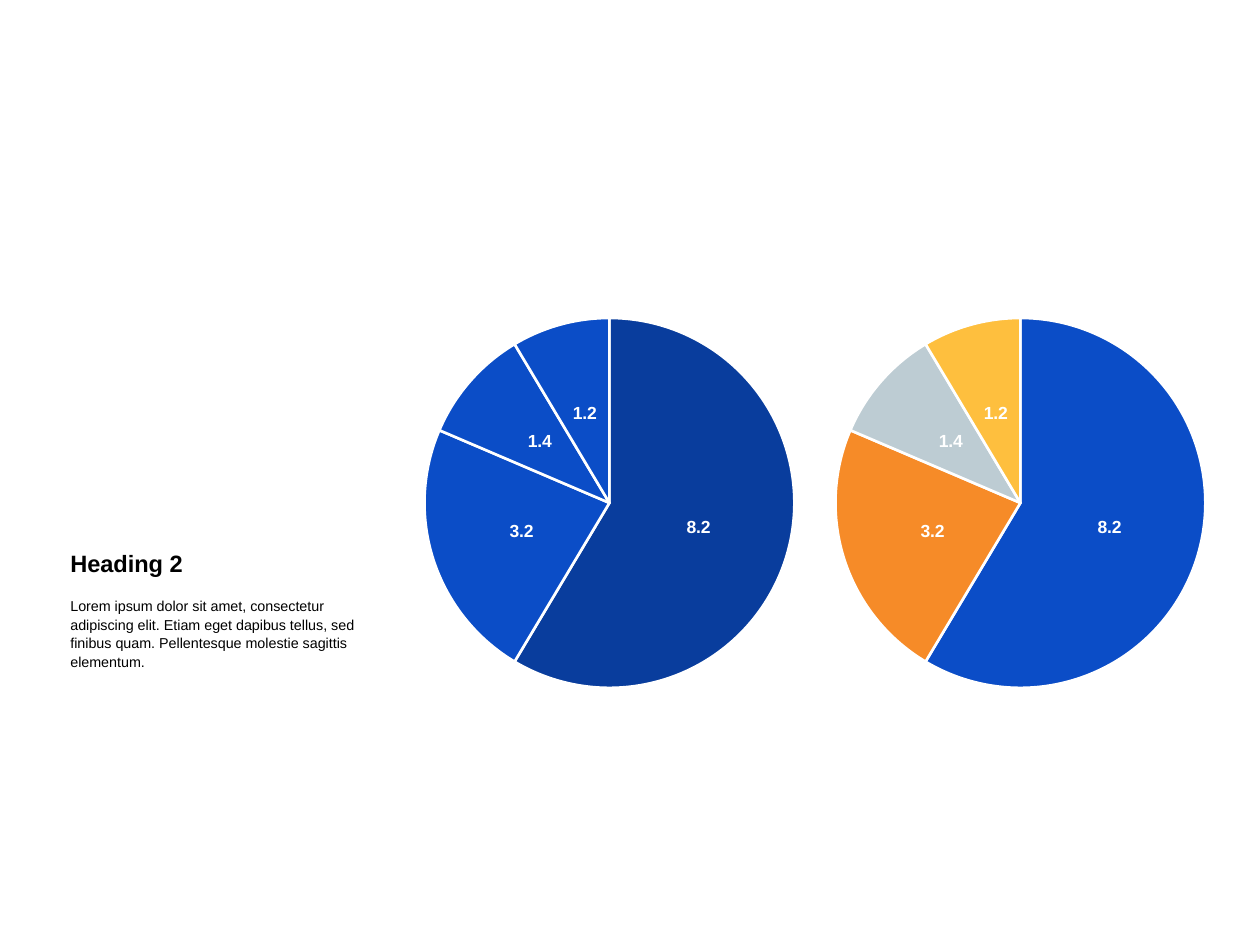
from lxml import etree
from pptx import Presentation
from pptx import util as u
from pptx.chart import data
from pptx.dml import color
from pptx.enum import chart as chart_enum, text
from pptx.oxml import ns

PX = 914400 / 126
COLORS = {
    "black": "000000",
    "white": "FFFFFF",
    "navy": "093D9D",
    "blue": "0B4DC7",
    "orange": "F68B28",
    "gray": "BDCCD3",
    "yellow": "FEBF3E",
}
PIES = [
    ["navy", "blue", "blue", "blue"],
    ["blue", "orange", "gray", "yellow"],
]
PIE_LEFT, PIE_TOP, PIE_WIDTH, PIE_HEIGHT, PIE_DIAMETER = 404, 300, 411, 406, 370


def px(length):
    return u.Emu(round(length * PX))


def style_font(font, size, name, bold=False):
    font.name = "Arial"
    font.size = u.Pt(size)
    font.bold = bold
    font.color.rgb = color.RGBColor.from_string(COLORS[name])


presentation = Presentation()
presentation.slide_width = px(1260)
presentation.slide_height = px(945)
slide = presentation.slides.add_slide(presentation.slide_layouts[6])

chart_data = data.CategoryChartData()
chart_data.categories = ["1", "2", "3", "4"]
chart_data.add_series("Series 1", [8.2, 3.2, 1.4, 1.2])

for column, slice_colors in enumerate(PIES):
    chart = slide.shapes.add_chart(
        chart_enum.XL_CHART_TYPE.PIE,
        px(PIE_LEFT + column * PIE_WIDTH), px(PIE_TOP),
        px(PIE_WIDTH), px(PIE_HEIGHT), chart_data,
    ).chart
    chart.has_legend = False
    chart.has_title = False
    style_font(chart.font, 10, "black")

    plot = chart.plots[0]
    plot.vary_by_categories = True
    plot.has_data_labels = True
    labels = plot.data_labels
    labels.show_value = True
    labels.show_percentage = False
    labels.number_format = "0.0"
    labels.number_format_is_linked = False
    labels.position = chart_enum.XL_LABEL_POSITION.CENTER
    style_font(labels.font, 10, "white", bold=True)

    for index, name in enumerate(slice_colors):
        slice_format = plot.series[0].points[index].format
        slice_format.fill.solid()
        slice_format.fill.fore_color.rgb = color.RGBColor.from_string(COLORS[name])
        slice_format.line.color.rgb = color.RGBColor.from_string(COLORS["white"])
        slice_format.line.width = u.Pt(1.5)

    plot_area = chart.element.find(".//" + ns.qn("c:plotArea"))
    for old_layout in plot_area.findall(ns.qn("c:layout")):
        plot_area.remove(old_layout)
    layout = etree.Element(ns.qn("c:layout"))
    plot_area.insert(0, layout)
    manual = etree.SubElement(layout, ns.qn("c:manualLayout"))
    width, height = PIE_DIAMETER / PIE_WIDTH, PIE_DIAMETER / PIE_HEIGHT
    for tag, value in [
        ("layoutTarget", "inner"), ("xMode", "edge"), ("yMode", "edge"),
        ("x", (1 - width) / 2), ("y", (1 - height) / 2),
        ("w", width), ("h", height),
    ]:
        etree.SubElement(manual, ns.qn("c:" + tag)).set("val", str(value))

text_box = slide.shapes.add_textbox(px(58), px(431), px(315), px(246))
frame = text_box.text_frame
frame.word_wrap = True
frame.vertical_anchor = text.MSO_ANCHOR.BOTTOM

heading = frame.paragraphs[0]
heading.text = "Heading 2"
heading.line_spacing = 0.9
style_font(heading.font, 13.5, "black", bold=True)

description = frame.add_paragraph()
description.text = (
    "Lorem ipsum dolor sit amet, consectetur adipiscing elit. "
    "Etiam eget dapibus tellus, sed finibus quam. "
    "Pellentesque molestie sagittis elementum."
)
description.line_spacing = 1.1
description.space_before = u.Pt(10)
style_font(description.font, 8.2, "black")

presentation.save("out.pptx")
